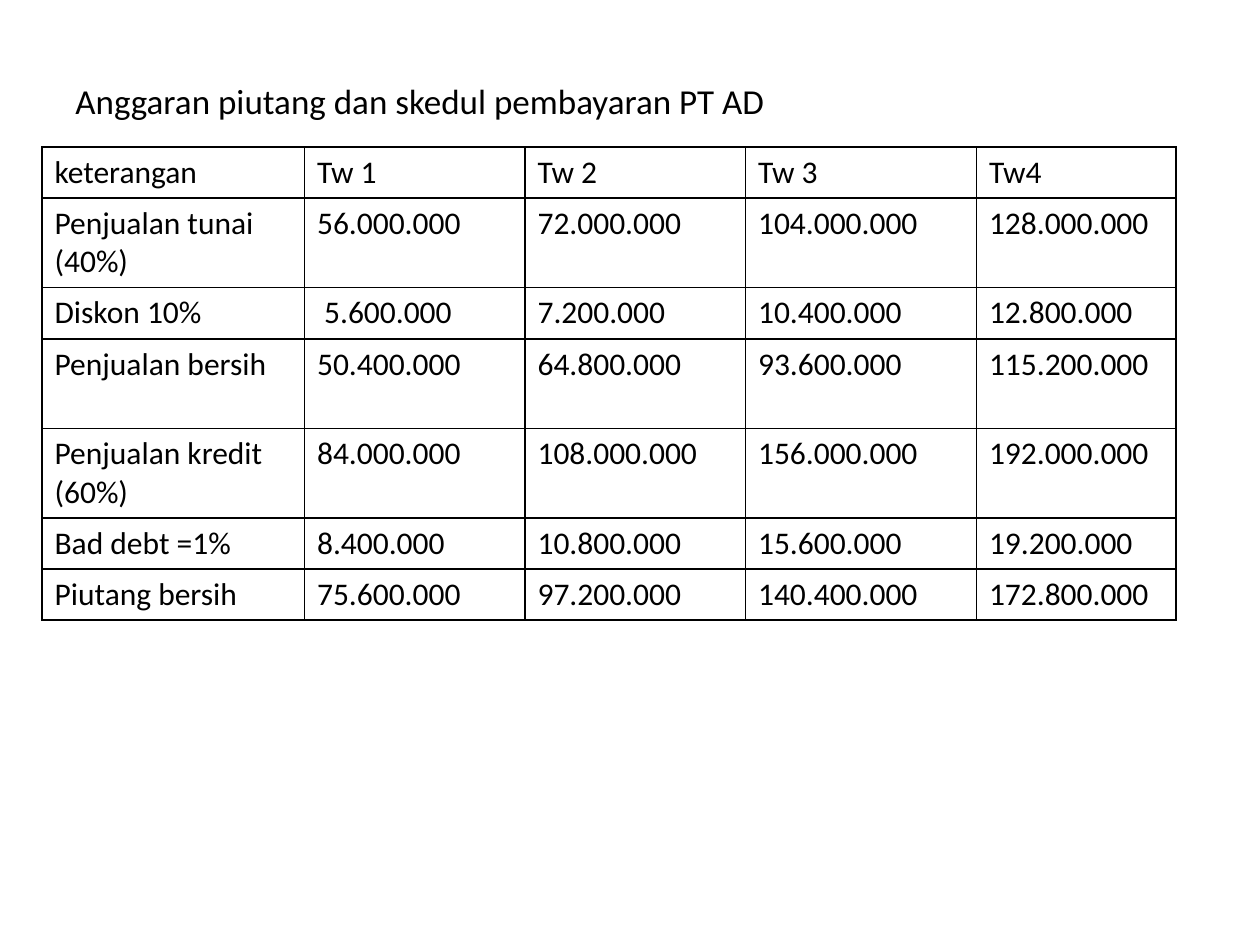
from dataclasses import dataclass

from lxml.etree import SubElement
from pptx import Presentation
from pptx.dml.color import RGBColor
from pptx.oxml.ns import qn
from pptx.util import Pt


@dataclass(frozen=True)
class Theme:
    font: str = "Calibri"
    ink: str = "000000"
    title_size: float = 20
    table_size: float = 18
    border_width: float = 1


COLUMN_WIDTHS = [150, 126, 126, 132, 114]
ROW_HEIGHT, TALL_ROW_HEIGHT = 29.2, 51.2
TALL_ROWS = {1, 3, 4}
BUDGET = [
    ["keterangan", "Tw 1", "Tw 2", "Tw 3", "Tw4"],
    ["Penjualan tunai (40%)", "56.000.000", "72.000.000", "104.000.000", "128.000.000"],
    ["Diskon 10%", " 5.600.000", "7.200.000", "10.400.000", "12.800.000"],
    ["Penjualan bersih", "50.400.000", "64.800.000", "93.600.000", "115.200.000"],
    ["Penjualan kredit (60%)", "84.000.000", "108.000.000", "156.000.000", "192.000.000"],
    ["Bad debt =1%", "8.400.000", "10.800.000", "15.600.000", "19.200.000"],
    ["Piutang bersih", "75.600.000", "97.200.000", "140.400.000", "172.800.000"],
]


class SlideBuilder:
    def __init__(self, slide, theme):
        self.slide = slide
        self.theme = theme

    def add_run(self, paragraph, text, size):
        run = paragraph.add_run()
        run.text = text
        run.font.name = self.theme.font
        run.font.size = Pt(size)
        run.font.color.rgb = RGBColor.from_string(self.theme.ink)

    def add_text(self, text, left, top, width, height):
        shape = self.slide.shapes.add_textbox(Pt(left), Pt(top), Pt(width), Pt(height))
        shape.text_frame.word_wrap = True
        self.add_run(shape.text_frame.paragraphs[0], text, self.theme.title_size)

    def add_borders(self, cell):
        properties = cell._tc.get_or_add_tcPr()
        for side in ("lnL", "lnR", "lnT", "lnB"):
            line = SubElement(properties, qn(f"a:{side}"), w=str(Pt(self.theme.border_width)))
            fill = SubElement(line, qn("a:solidFill"))
            SubElement(fill, qn("a:srgbClr"), val=self.theme.ink)

    def add_table(self, rows, left, top, widths, heights):
        frame = self.slide.shapes.add_table(
            len(rows), len(widths), Pt(left), Pt(top), Pt(sum(widths)), Pt(sum(heights)))
        table = frame.table
        table.first_row = table.horz_banding = False
        for column, width in zip(table.columns, widths):
            column.width = Pt(width)
        for row, height, texts in zip(table.rows, heights, rows):
            row.height = Pt(height)
            for cell, text in zip(row.cells, texts):
                self.add_run(cell.text_frame.paragraphs[0], text, self.theme.table_size)
                self.add_borders(cell)
                cell.fill.background()


def main():
    presentation = Presentation()
    presentation.slide_width, presentation.slide_height = Pt(720), Pt(540)
    slide = presentation.slides.add_slide(presentation.slide_layouts[6])
    builder = SlideBuilder(slide, Theme())
    builder.add_text("Anggaran piutang dan skedul pembayaran PT AD", 36, 42, 648, 440)
    heights = [TALL_ROW_HEIGHT if index in TALL_ROWS else ROW_HEIGHT
               for index in range(len(BUDGET))]
    builder.add_table(BUDGET, 24, 84, COLUMN_WIDTHS, heights)
    presentation.save("out.pptx")


if __name__ == "__main__":
    main()
